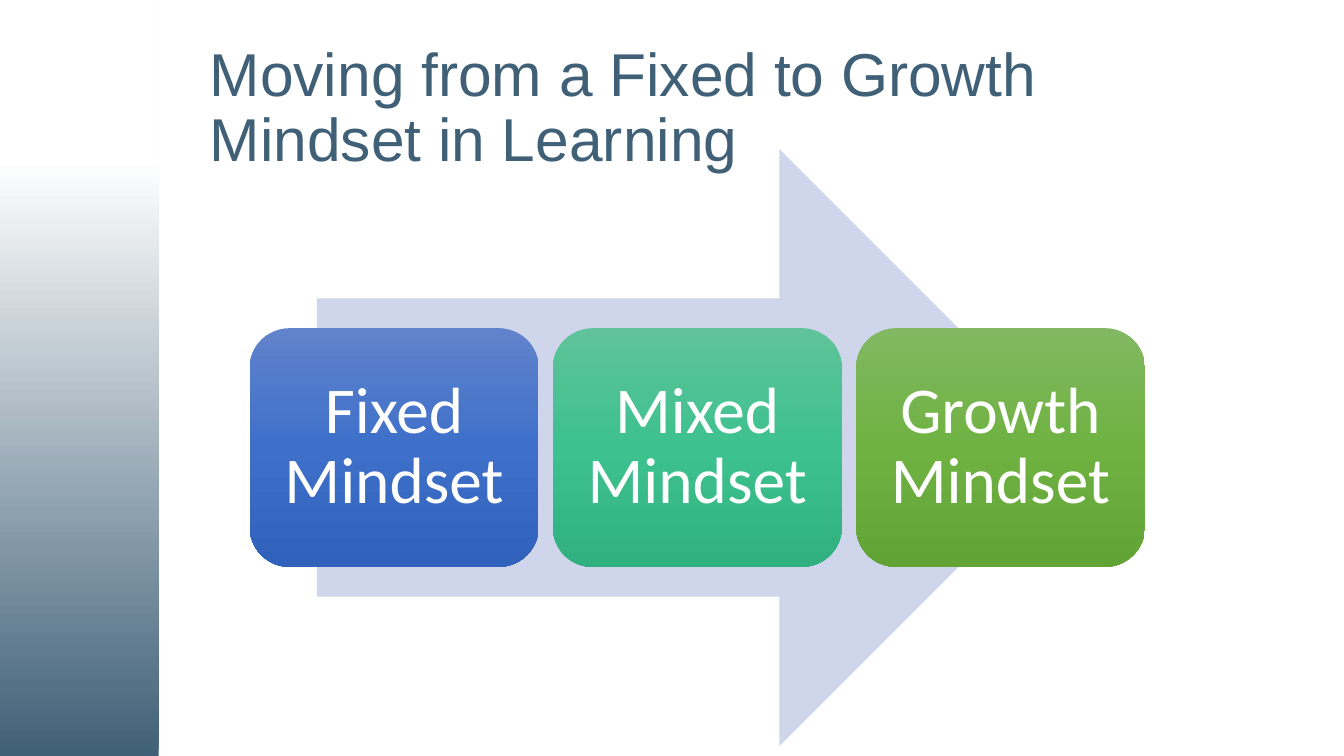
from dataclasses import dataclass

import lxml.etree
import pptx
import pptx.dml.color
import pptx.enum.shapes
import pptx.enum.text
import pptx.oxml.ns
import pptx.util

Cm = pptx.util.Cm
SHAPES = pptx.enum.shapes.MSO_SHAPE
ALIGN = pptx.enum.text.PP_ALIGN
MIDDLE = pptx.enum.text.MSO_ANCHOR.MIDDLE


@dataclass(frozen=True)
class Theme:
    slate: str = "406077"
    white: str = "FFFFFF"
    arrow: str = "CFD5EA"
    blue: tuple = ("6183CB", "3E70CA", "3062BB")
    teal: tuple = ("60C39A", "3DC18F", "31B080")
    green: tuple = ("81B861", "6FB242", "62A336")
    title_font: str = "Arial"
    stage_font: str = "Calibri"
    title_size: float = 32.4
    stage_size: float = 35


THEME = Theme()
STAGES = (
    ("Fixed Mindset", THEME.blue),
    ("Mixed Mindset", THEME.teal),
    ("Growth Mindset", THEME.green),
)


def rgb(value):
    return pptx.dml.color.RGBColor.from_string(value)


def add_plain_shape(slide, kind, left, top, width, height):
    """Add a preset shape without outline or shadow; lengths in cm."""
    shape = slide.shapes.add_shape(kind, Cm(left), Cm(top), Cm(width), Cm(height))
    shape.shadow.inherit = False
    shape.line.fill.background()
    return shape


def fill_gradient(shape, stops, angle):
    """Fill with (percent, colour) stops; angle is clockwise in degrees."""
    qn = pptx.oxml.ns.qn
    gradient = lxml.etree.Element(qn("a:gradFill"), rotWithShape="1")
    stop_list = lxml.etree.SubElement(gradient, qn("a:gsLst"))
    for percent, colour in stops:
        stop = lxml.etree.SubElement(stop_list, qn("a:gs"), pos=str(percent * 1000))
        lxml.etree.SubElement(stop, qn("a:srgbClr"), val=colour)
    lxml.etree.SubElement(gradient, qn("a:lin"), ang=str(angle * 60000), scaled="0")
    shape.element.spPr.find(qn("a:prstGeom")).addnext(gradient)


def format_text(frame, alignment, font, size, colour):
    frame.word_wrap = True
    frame.auto_size = pptx.enum.text.MSO_AUTO_SIZE.NONE
    frame.vertical_anchor = MIDDLE
    for paragraph in frame.paragraphs:
        paragraph.alignment = alignment
        paragraph.line_spacing = 0.9
        for run in paragraph.runs:
            run.font.name = font
            run.font.size = pptx.util.Pt(size)
            run.font.color.rgb = rgb(colour)


def add_side_band(slide, left, top, width, height):
    band = add_plain_shape(slide, SHAPES.RECTANGLE, left, top, width, height)
    fill_gradient(band, ((0, THEME.slate), (79, THEME.white)), 270)


def place_title(slide, left, top, width, height):
    title = slide.shapes.title
    title.left, title.top = Cm(left), Cm(top)
    title.width, title.height = Cm(width), Cm(height)
    title.text_frame.text = "Moving from a Fixed to Growth Mindset in Learning"
    format_text(title.text_frame, ALIGN.LEFT, THEME.title_font,
                THEME.title_size, THEME.slate)


def add_stage(slide, label, colours, left, top, width, height):
    stage = add_plain_shape(slide, SHAPES.ROUNDED_RECTANGLE, left, top, width, height)
    fill_gradient(stage, zip((0, 50, 100), colours), 90)
    frame = stage.text_frame
    frame.margin_left = frame.margin_right = Cm(0.38)
    frame.margin_top = frame.margin_bottom = Cm(0.38)
    frame.text = label
    format_text(frame, ALIGN.CENTER, THEME.stage_font, THEME.stage_size, THEME.white)


def add_progression(slide, left, top, width, height):
    """Place the stages in a row, centred over a wide arrow."""
    arrow_width = 0.85 * width
    arrow = add_plain_shape(slide, SHAPES.RIGHT_ARROW,
                            left + (width - arrow_width) / 2, top, arrow_width, height)
    arrow.fill.solid()
    arrow.fill.fore_color.rgb = rgb(THEME.arrow)

    gap = 0.27
    stage_width = (width - gap * (len(STAGES) - 1)) / len(STAGES)
    stage_height = 0.4 * height
    stage_top = top + (height - stage_height) / 2
    for index, (label, colours) in enumerate(STAGES):
        add_stage(slide, label, colours, left + index * (stage_width + gap),
                  stage_top, stage_width, stage_height)


def main():
    deck = pptx.Presentation()
    deck.slide_width, deck.slide_height = Cm(25.4), Cm(14.29)
    slide = deck.slides.add_slide(deck.slide_layouts.get_by_name("Title Only"))
    add_side_band(slide, 0, 0, 3, 14.29)
    place_title(slide, 3.71, 0.76, 18.36, 2.62)
    add_progression(slide, 4.72, 2.82, 16.92, 11.28)
    deck.save("out.pptx")


if __name__ == "__main__":
    main()
